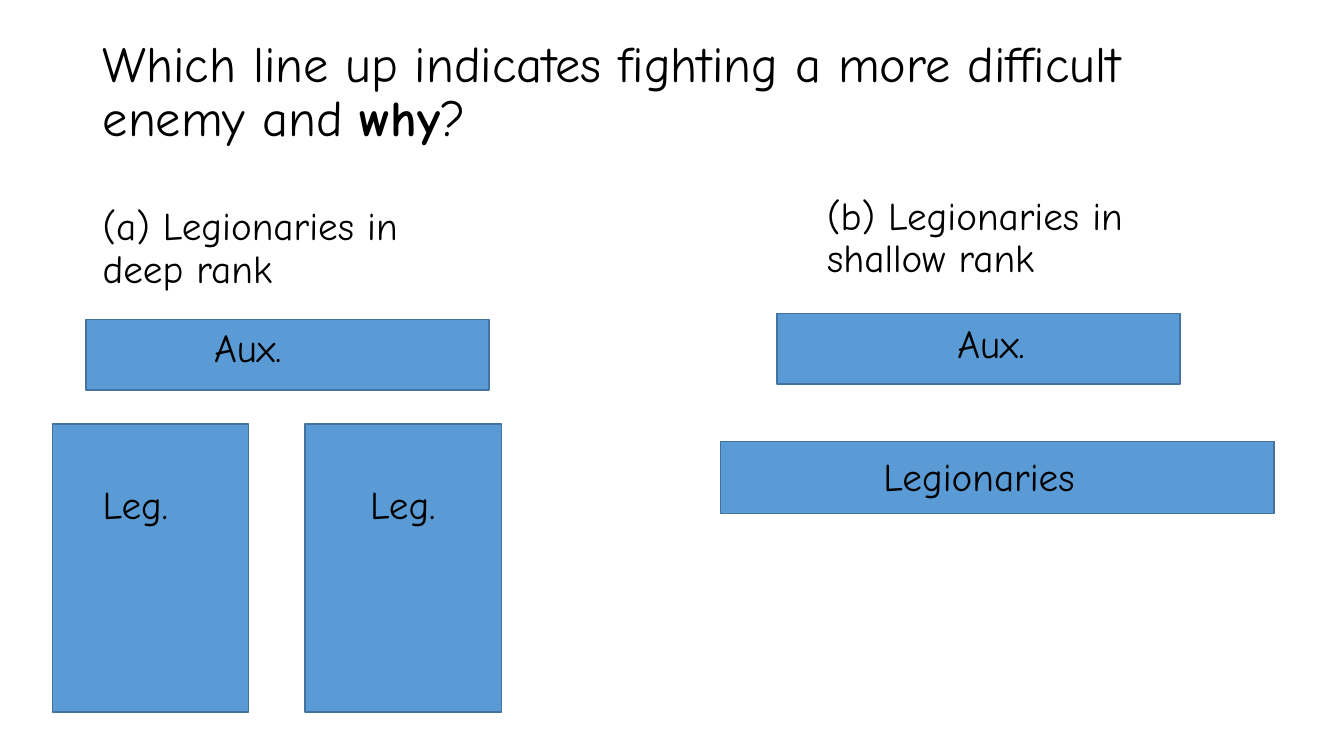
from dataclasses import dataclass

from pptx import Presentation
from pptx.dml.color import RGBColor
from pptx.enum.shapes import MSO_SHAPE
from pptx.enum.text import MSO_ANCHOR, MSO_AUTO_SIZE, PP_ALIGN
from pptx.util import Inches, Pt


@dataclass(frozen=True)
class Theme:
    font: str = "Comic Neue"
    ink: RGBColor = RGBColor(0x00, 0x00, 0x00)
    paper: RGBColor = RGBColor(0xFF, 0xFF, 0xFF)
    troop: RGBColor = RGBColor(0x5B, 0x9B, 0xD5)
    troop_edge: RGBColor = RGBColor(0x43, 0x73, 0x9E)
    title_size: int = 36
    label_size: int = 28
    edge_width: int = 1
    line_spacing: float = 0.9


class LineUpSlide:
    def __init__(self, deck, theme):
        self.deck = deck
        self.theme = theme
        self.slide = deck.slides.add_slide(deck.slide_layouts[5])
        background = self.slide.background.fill
        background.solid()
        background.fore_color.rgb = theme.paper

    def place(self, left, top, width, height):
        across, down = self.deck.slide_width / 100, self.deck.slide_height / 100
        return [round(share * unit) for share, unit in
                ((left, across), (top, down), (width, across), (height, down))]

    def set_text(self, frame, runs, size, anchor):
        frame.word_wrap = True
        frame.auto_size = MSO_AUTO_SIZE.NONE
        frame.vertical_anchor = anchor
        paragraph = frame.paragraphs[0]
        paragraph.alignment = PP_ALIGN.LEFT
        paragraph.line_spacing = self.theme.line_spacing
        paragraph.font.name = self.theme.font
        paragraph.font.size = Pt(size)
        paragraph.font.color.rgb = self.theme.ink
        for wording, bold in runs:
            run = paragraph.add_run()
            run.text = wording
            if bold:
                run.font.bold = True

    def title(self, runs, *area):
        heading = self.slide.shapes.title
        heading.left, heading.top, heading.width, heading.height = self.place(*area)
        self.set_text(heading.text_frame, runs, self.theme.title_size, MSO_ANCHOR.MIDDLE)

    def label(self, wording, left, top):
        caption = self.slide.shapes.add_textbox(*self.place(left, top, 29.5, 16.1))
        self.set_text(caption.text_frame, [(wording, False)],
                      self.theme.label_size, MSO_ANCHOR.TOP)

    def troop(self, wording, area, label_at):
        block = self.slide.shapes.add_shape(MSO_SHAPE.RECTANGLE, *self.place(*area))
        block.shadow.inherit = False
        block.fill.solid()
        block.fill.fore_color.rgb = self.theme.troop
        block.line.color.rgb = self.theme.troop_edge
        block.line.width = Pt(self.theme.edge_width)
        self.label(wording, *label_at)


def main():
    deck = Presentation()
    deck.slide_width, deck.slide_height = Inches(13.33), Inches(7.5)
    line_up = LineUpSlide(deck, Theme())

    line_up.title([("Which line up indicates fighting a more difficult enemy and ", False),
                   ("why", True), ("?", False)], 6.9, 6.8, 86.3, 11.1)

    line_up.label("(a) Legionaries in deep rank", 6.9, 26.7)
    line_up.label("(b) Legionaries in shallow rank", 60.8, 25.3)

    auxiliaries = (30, 9.3)
    deep_legion = (14.6, 38.1)
    shallow_legion = (41.2, 9.5)
    troops = [
        ("Aux.", (6.4, 42.3, *auxiliaries), (15.2, 42.8)),
        ("Leg.", (3.9, 56.1, *deep_legion), (6.9, 63.6)),
        ("Leg.", (22.7, 56.1, *deep_legion), (26.8, 63.6)),
        ("Aux.", (57.8, 41.5, *auxiliaries), (70.5, 42.3)),
        ("Legionaries", (53.6, 58.4, *shallow_legion), (65, 59.9)),
    ]
    for wording, area, label_at in troops:
        line_up.troop(wording, area, label_at)

    deck.save("out.pptx")


if __name__ == "__main__":
    main()
